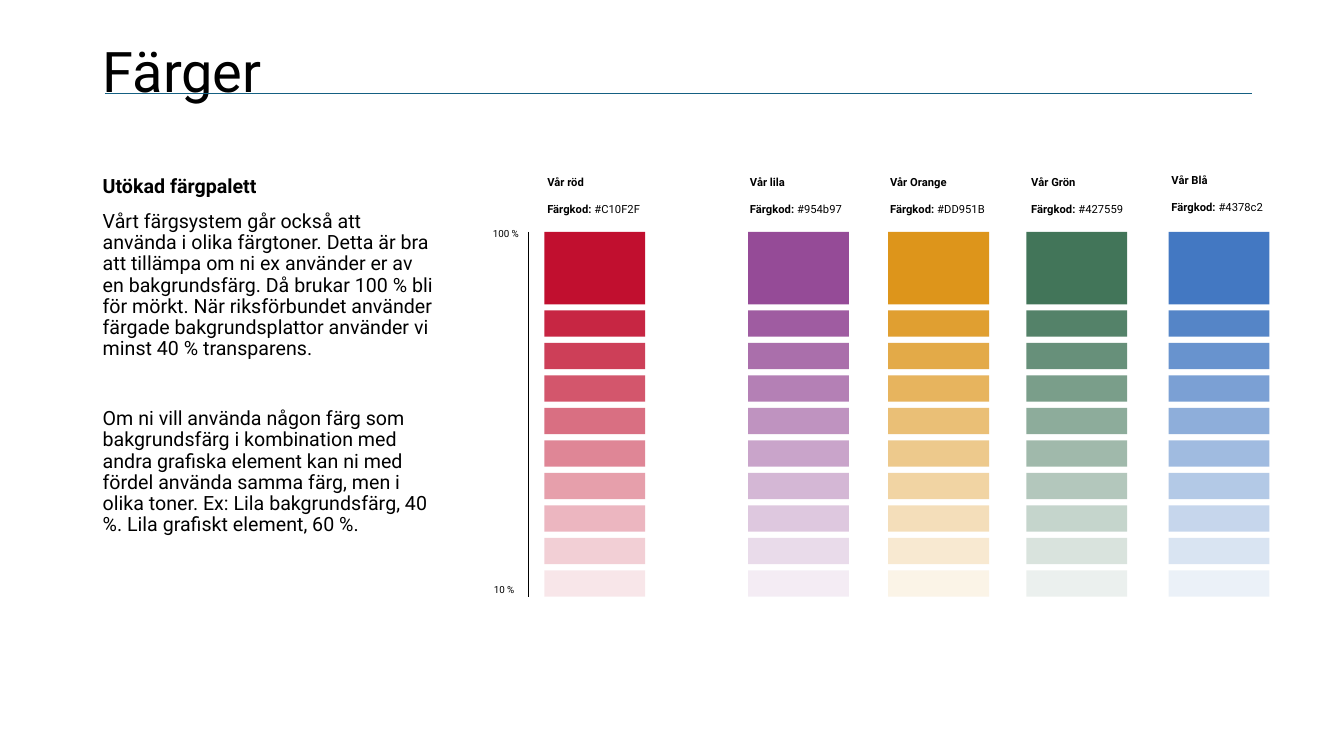
import dataclasses

import lxml.etree
import pptx
import pptx.dml.color
import pptx.enum.shapes
import pptx.enum.text
import pptx.oxml.ns
import pptx.util

Inches = pptx.util.Inches
Pt = pptx.util.Pt
RGB = pptx.dml.color.RGBColor.from_string
qn = pptx.oxml.ns.qn


@dataclasses.dataclass(frozen=True)
class Theme:
    font: str = "Roboto"
    text: str = "000000"
    rule: str = "156082"
    red: str = "#C10F2F"
    purple: str = "#954b97"
    orange: str = "#DD951B"
    green: str = "#427559"
    blue: str = "#4378c2"
    title_size: int = 40
    body_size: int = 14
    label_size: int = 8
    scale_size: int = 7


theme = Theme()
presentation = pptx.Presentation()
presentation.slide_width = Inches(13.33)
presentation.slide_height = Inches(7.5)
slide = presentation.slides.add_slide(presentation.slide_layouts[6])


def add_text(left, top, width, height, paragraphs, size, gaps=(0,), line_spacing=1.0):
    shape = slide.shapes.add_textbox(Inches(left), Inches(top), Inches(width), Inches(height))
    frame = shape.text_frame
    frame.word_wrap = True
    for index, (runs, gap) in enumerate(zip(paragraphs, gaps)):
        paragraph = frame.paragraphs[0] if index == 0 else frame.add_paragraph()
        paragraph.line_spacing = line_spacing
        paragraph.space_before = Pt(gap)
        paragraph.font.name = theme.font
        paragraph.font.size = Pt(size)
        paragraph.font.color.rgb = RGB(theme.text)
        for words, bold in runs:
            run = paragraph.add_run()
            run.text = words
            run.font.name = theme.font
            run.font.size = Pt(size)
            run.font.bold = bold
            run.font.color.rgb = RGB(theme.text)
    return frame


title = add_text(0.92, 0.01, 11.5, 1.45, [[("Färger", False)]], theme.title_size, line_spacing=0.9)
title.vertical_anchor = pptx.enum.text.MSO_ANCHOR.MIDDLE

body = [
    [("Utökad färgpalett", True)],
    [("Vårt färgsystem går också att använda i olika färgtoner. Detta är bra att tillämpa "
      "om ni ex använder er av en bakgrundsfärg. Då brukar 100 % bli för mörkt. När "
      "riksförbundet använder färgade bakgrundsplattor använder vi minst 40 % transparens.", False)],
    [("Om ni vill använda någon färg som bakgrundsfärg i kombination med andra grafiska "
      "element kan ni med fördel använda samma färg, men i olika toner. Ex: Lila "
      "bakgrundsfärg, 40 %. Lila grafiskt element, 60 %.", False)],
]
add_text(0.92, 1.7, 3.48, 4.76, body, theme.body_size, gaps=(0, 10, 35), line_spacing=0.9)

swatch_width = 1
tint_top = 3.08
tint_pitch = 0.3225
columns = [
    ("Vår röd", theme.red, 5.4, 5.33, 1.69),
    ("Vår lila", theme.purple, 7.42, 7.34, 1.69),
    ("Vår Orange", theme.orange, 8.81, 8.73, 1.69),
    ("Vår Grön", theme.green, 10.18, 10.13, 1.69),
    ("Vår Blå", theme.blue, 11.59, 11.52, 1.67),
]
for name, code, left, label_left, label_top in columns:
    label = [[(name, True)], [("Färgkod: ", True), (code, False)]]
    add_text(label_left, label_top, 1.4, 0.5, label, theme.label_size, gaps=(0, 9.5))
    for step in range(10):
        top = tint_top + (step - 1) * tint_pitch if step else 2.3
        height = 0.26 if step else 0.72
        swatch = slide.shapes.add_shape(
            pptx.enum.shapes.MSO_SHAPE.RECTANGLE,
            Inches(left), Inches(top), Inches(swatch_width), Inches(height))
        swatch.shadow.inherit = False
        swatch.line.fill.background()
        swatch.fill.solid()
        swatch.fill.fore_color.rgb = RGB(code[1:].upper())
        if step:
            color = swatch._element.spPr.find(f"{qn('a:solidFill')}/{qn('a:srgbClr')}")
            lxml.etree.SubElement(color, qn("a:alpha"), val=str((10 - step) * 10000))

for words, left, top in [("100 %", 4.79, 2.21), ("10 %", 4.8, 5.74)]:
    add_text(left, top, 1.4, 0.22, [[(words, False)]], theme.scale_size)

lines = [
    (5.24, 2.3, 5.24, 5.92, theme.text),
    (1.04, 0.93, 12.42, 0.93, theme.rule),
]
for start_x, start_y, end_x, end_y, color in lines:
    connector = slide.shapes.add_connector(
        pptx.enum.shapes.MSO_CONNECTOR.STRAIGHT,
        Inches(start_x), Inches(start_y), Inches(end_x), Inches(end_y))
    connector.line.color.rgb = RGB(color)
    connector.line.width = Pt(0.5)
    lxml.etree.SubElement(connector._element.spPr, qn("a:effectLst"))

presentation.save("out.pptx")
